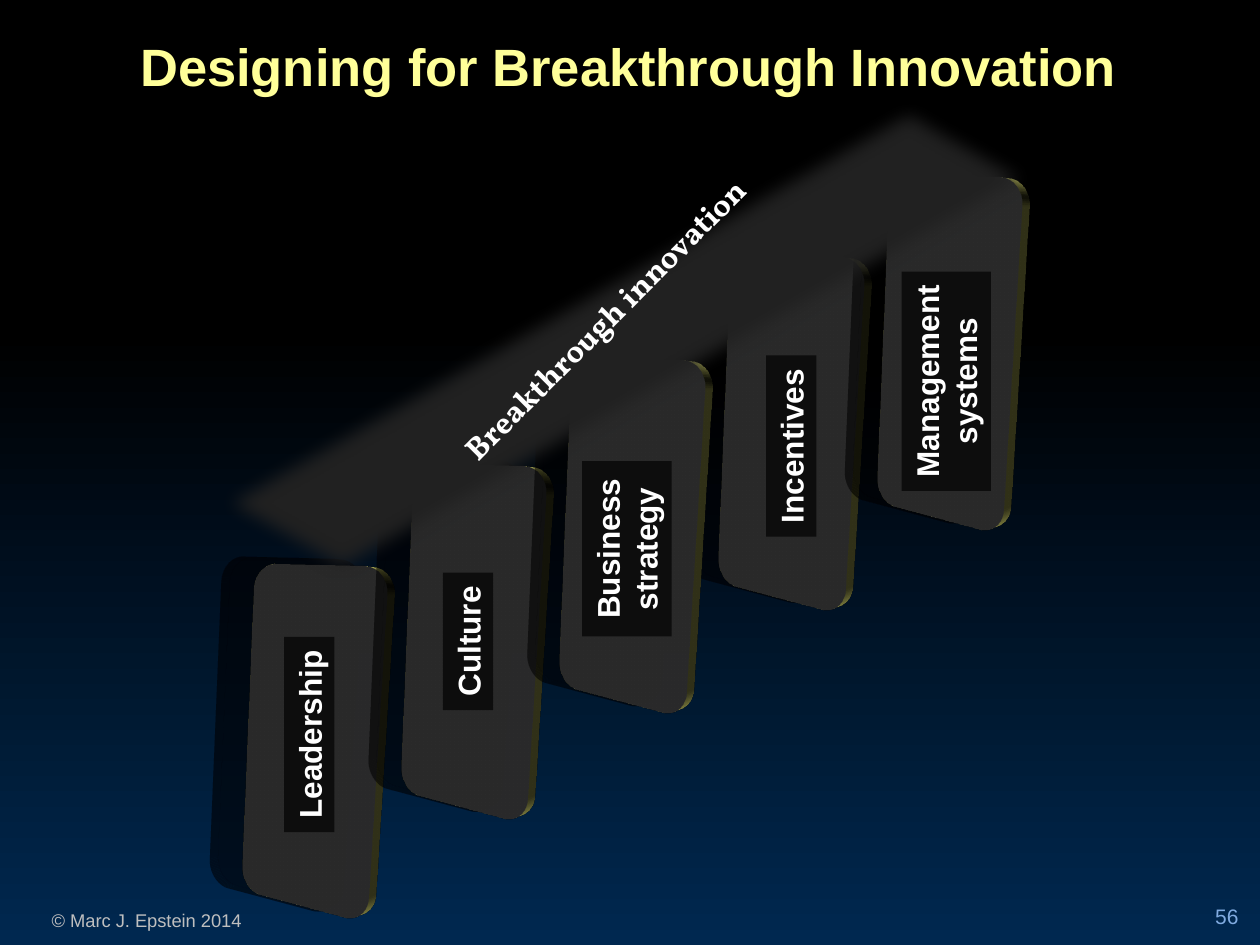
from lxml.etree import SubElement
from pptx import Presentation
from pptx.dml.color import RGBColor
from pptx.enum.shapes import MSO_SHAPE
from pptx.enum.text import MSO_ANCHOR, PP_ALIGN
from pptx.oxml.ns import qn
from pptx.util import Inches, Pt

deck = Presentation()
deck.slide_width, deck.slide_height = Inches(10), Inches(7.5)
slide = deck.slides.add_slide(deck.slide_layouts[5])
shapes = slide.shapes
hue = RGBColor.from_string


def write(shape, text, size, color, font="Arial", bold=True,
          align=PP_ALIGN.CENTER):
    frame = shape.text_frame
    frame.text = text
    frame.vertical_anchor = MSO_ANCHOR.TOP
    for para in frame.paragraphs:
        para.alignment = align
        for run in para.runs:
            run.font.size, run.font.bold = Pt(size), bold
            run.font.name, run.font.color.rgb = font, hue(color)


def solid(left, top, wide, tall, view, shade, soft=0, depth=0):
    """Add a dark rounded slab seen by a 3-D camera."""
    slab = shapes.add_shape(MSO_SHAPE.ROUNDED_RECTANGLE, Inches(left),
                            Inches(top), Inches(wide), Inches(tall))
    slab.shadow.inherit = False
    slab.fill.solid()
    slab.fill.fore_color.rgb = hue("0D0D0D")
    slab.line.color.rgb = hue("F79646")
    slab.line.width = Pt(0.75)
    props = slab._element.spPr
    color, alpha, blur, dist, turn = shade
    glow = props.find(qn("a:effectLst"))
    cast = SubElement(glow, qn("a:outerShdw"), blurRad=str(Pt(blur)),
                      dist=str(Pt(dist)), dir=str(turn * 60000))
    tint = SubElement(cast, qn("a:srgbClr"), val=color)
    SubElement(tint, qn("a:alpha"), val=str(alpha * 1000))
    if soft:
        SubElement(glow, qn("a:softEdge"), rad=str(Pt(soft)))
    scene = SubElement(props, qn("a:scene3d"))
    SubElement(scene, qn("a:camera"), prst=view)
    SubElement(scene, qn("a:lightRig"), rig="threePt", dir="t")
    block = SubElement(props, qn("a:sp3d"), extrusionH=str(Pt(depth)))
    if depth:
        rim = SubElement(block, qn("a:extrusionClr"))
        SubElement(rim, qn("a:srgbClr"), val="FFFF80")
    return slab


# Background
back = slide.background.fill
back.gradient()
back.gradient_angle = 270
for stop, place, color in zip(back.gradient_stops, (0.35, 1),
                              ("000000", "002850")):
    stop.position, stop.color.rgb = place, hue(color)

# Title and footer
title = shapes.title
title.left, title.top = Inches(-0.01), Inches(0.22)
title.width, title.height = Inches(10), Inches(0.61)
write(title, "Designing for Breakthrough Innovation", 30, "FFFF99")

foot = shapes.add_textbox(Inches(-0.17), Inches(7.17), Inches(2.67), Inches(0.28))
write(foot, "© Marc J. Epstein 2014", 10.5, "BFBFBF", bold=False)
page = shapes.add_textbox(Inches(9), Inches(7.02), Inches(0.83), Inches(0.4))
write(page, "56", 12, "81ABE0", bold=False, align=PP_ALIGN.RIGHT)
page.text_frame.vertical_anchor = MSO_ANCHOR.BOTTOM
page.text_frame.margin_right = 0

# Rising cards: step, text, top, then the label's left, top, length, depth
cards = [
    (0, "Leadership", 4.5, 1.68, 5.63, 1.55, 0.4),
    (1, "Culture", 3.71, 3.17, 4.89, 1.09, 0.4),
    (3, "Incentives", 2.05, 5.56, 3.34, 1.44, 0.4),
    (4, "Management\nsystems", 1.42, 6.64, 2.67, 1.74, 0.71),
    (2, "Business\nstrategy", 2.87, 4.28, 4, 1.39, 0.71),
]
pitch = 1.26
for step, text, top, *box in cards:
    solid(1.83 + step * pitch, top, pitch, 2.74,
          "perspectiveHeroicExtremeLeftFacing",
          ("000000", 18, 14.5, 19, 192), depth=8)
    label = shapes.add_shape(MSO_SHAPE.RECTANGLE, *map(Inches, box))
    label.rotation = 270
    label.shadow.inherit = False
    label.fill.solid()
    label.fill.fore_color.rgb = hue("0D0D0D")
    label.line.fill.background()
    write(label, text, 18, "FFFFFF")
    label.text_frame.word_wrap = False

# Soft band across the card tops
band = solid(0.92, 1.86, 8.08, 1.67, "isometricTopUp",
             ("17365D", 100, 0, 2.8, 45), soft=10)
write(band, "Breakthrough innovation", 18, "FFFFFF", "Vollkorn")
band.text_frame.word_wrap = False
band.text_frame.margin_top = Inches(0.37)

deck.save("out.pptx")
